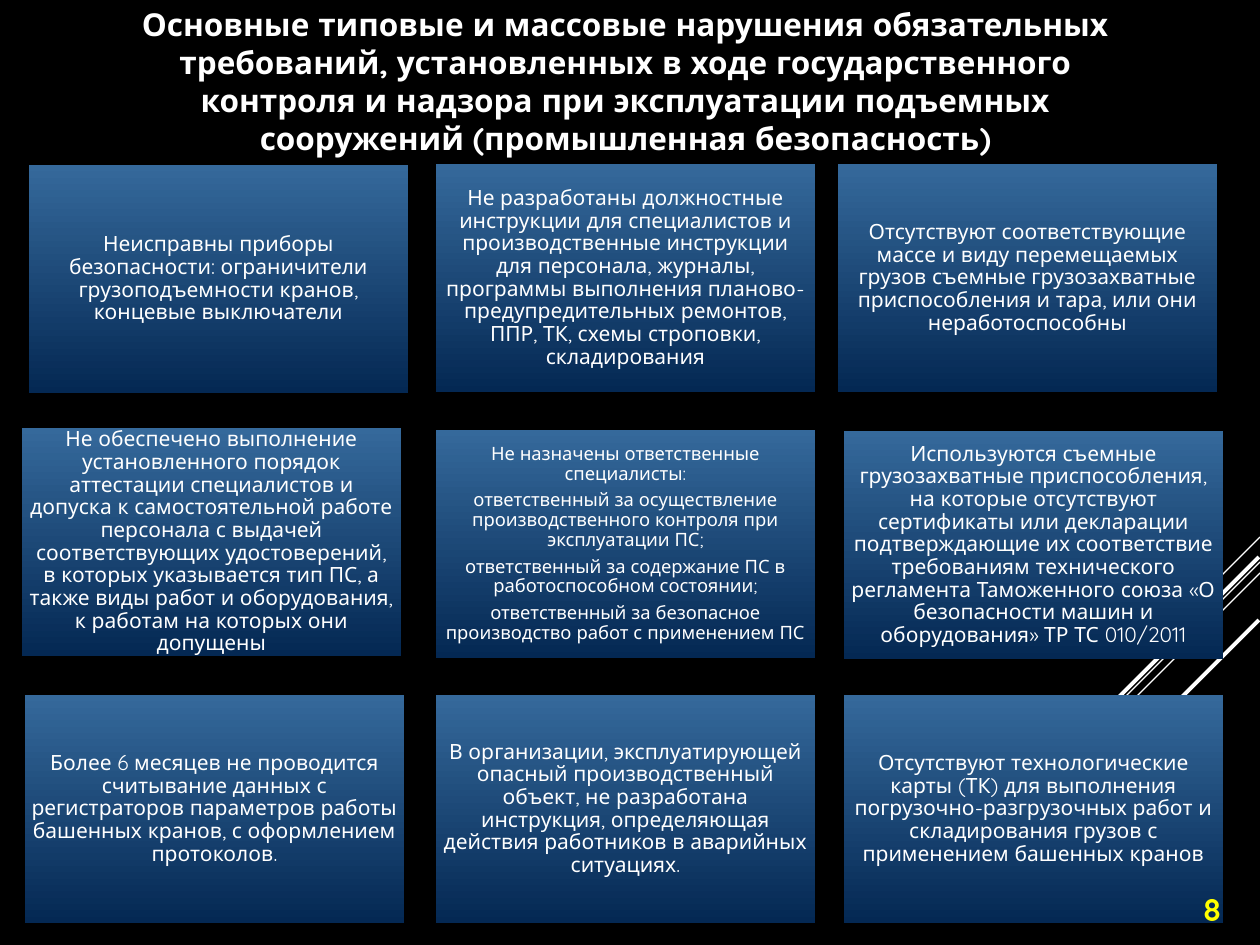
from lxml import etree
from pptx import Presentation
from pptx.dml.color import RGBColor
from pptx.enum.shapes import MSO_CONNECTOR, MSO_SHAPE
from pptx.enum.text import MSO_ANCHOR, PP_ALIGN
from pptx.oxml.ns import qn
from pptx.util import Emu, Pt

STRAIGHT = MSO_CONNECTOR.STRAIGHT
RECTANGLE, OVAL = MSO_SHAPE.RECTANGLE, MSO_SHAPE.OVAL
MIDDLE, CENTER = MSO_ANCHOR.MIDDLE, PP_ALIGN.CENTER

# Content
TITLE = ("Основные типовые и массовые нарушения обязательных требований, "
         "установленных в ходе государственного контроля и надзора при "
         "эксплуатации подъемных сооружений (промышленная безопасность)")
PAGE_NUMBER = "8"

# Violations: left, top, text size, paragraphs
VIOLATIONS = [
    (29, 165, 12, ["Неисправны приборы безопасности: ограничители "
                   "грузоподъемности кранов, концевые выключатели"]),
    (436, 164, 12, ["Не разработаны должностные инструкции для специалистов и "
                    "производственные инструкции для персонала, журналы, программы "
                    "выполнения планово-предупредительных ремонтов, ППР, ТК, схемы "
                    "строповки, складирования"]),
    (838, 164, 12, ["Отсутствуют соответствующие массе и виду перемещаемых грузов "
                    "съемные грузозахватные приспособления и тара, или они "
                    "неработоспособны"]),
    (22, 428, 12, ["Не обеспечено выполнение установленного порядок аттестации "
                   "специалистов и допуска к самостоятельной работе персонала с "
                   "выдачей соответствующих удостоверений, в которых указывается "
                   "тип ПС, а также виды работ и оборудования, к работам на которых "
                   "они допущены"]),
    (436, 430, 10.5, ["Не назначены ответственные специалисты:",
                      "ответственный за осуществление производственного контроля "
                      "при эксплуатации ПС;",
                      "ответственный за содержание ПС в работоспособном состоянии;",
                      "ответственный за безопасное производство работ с "
                      "применением ПС"]),
    (844, 431, 12, ["Используются съемные грузозахватные приспособления, на которые "
                    "отсутствуют сертификаты или декларации подтверждающие их "
                    "соответствие требованиям технического регламента Таможенного "
                    "союза «О безопасности машин и оборудования» ТР ТС 010/2011"]),
    (25, 695, 12, ["Более 6 месяцев не проводится считывание данных с регистраторов "
                   "параметров работы башенных кранов, с оформлением протоколов."]),
    (436, 695, 12, ["В организации, эксплуатирующей опасный производственный объект, "
                    "не разработана инструкция, определяющая действия работников в "
                    "аварийных ситуациях."]),
    (844, 695, 12, ["Отсутствуют технологические карты (ТК) для выполнения "
                    "погрузочно-разгрузочных работ и складирования грузов с "
                    "применением башенных кранов"]),
]
BOX_WIDTH, BOX_HEIGHT = 379, 228

# Diagonal rays at 45 degrees: right end x, y, run, width in points
RAYS = [
    (1260, 537, 105, 0.75),
    (1260, 562, 340, 0.75),
    (1260, 573, 217, 0.75),
    (1259, 557, 199, 2.25),
    (1259, 620, 144, 2.25),
]

COLORS = {"background": "000000", "text": "FFFFFF", "ray": "FFFFFF",
          "box_top": "35699B", "box_bottom": "042853", "number": "FFFF00"}
FONT = "Quicksand"
EMU_PER_PX = 914400 / 126


def px(*values):
    return [Emu(round(value * EMU_PER_PX)) for value in values]


def color(key):
    return RGBColor.from_string(COLORS[key])


def write(shape, paragraphs, size, color_key="text", bold=False, inset=(13, 6), **spacing):
    frame = shape.text_frame
    side, end = px(*inset)
    frame_format = {"word_wrap": True, "vertical_anchor": MIDDLE,
                    "margin_left": side, "margin_right": side,
                    "margin_top": end, "margin_bottom": end}
    for name, value in frame_format.items():
        setattr(frame, name, value)
    frame.text = "\n".join(paragraphs)
    for paragraph in frame.paragraphs:
        for name, value in {"alignment": CENTER, **spacing}.items():
            setattr(paragraph, name, value)
        for run in paragraph.runs:
            for name, value in {"name": FONT, "size": Pt(size), "bold": bold}.items():
                setattr(run.font, name, value)
            run.font.color.rgb = color(color_key)


deck = Presentation()
deck.slide_width, deck.slide_height = px(1260, 945)
slide = deck.slides.add_slide(deck.slide_layouts[5])
slide.background.fill.solid()
slide.background.fill.fore_color.rgb = color("background")
shapes = slide.shapes

# Diagonal rays
for x, y, run_length, width in RAYS:
    ray = shapes.add_connector(STRAIGHT, *px(x, y, x - run_length, y + run_length))
    ray.line.color.rgb = color("ray")
    ray.line.width = Pt(width)
    etree.SubElement(ray._element.spPr, qn("a:effectLst"))

# Violation boxes
for left, top, size, paragraphs in VIOLATIONS:
    box = shapes.add_shape(RECTANGLE, *px(left, top, BOX_WIDTH, BOX_HEIGHT))
    box.shadow.inherit = False
    box.fill.gradient()
    box.fill.gradient_angle = 270
    for stop, key in zip(box.fill.gradient_stops, ("box_top", "box_bottom")):
        stop.color.rgb = color(key)
    stops = box.fill.gradient_stops
    stops[0].position, stops[1].position = 0, 1
    box.line.fill.background()
    write(box, paragraphs, size, inset=(6, 6),
          line_spacing=0.9, space_after=Pt(round(size * 0.35, 1)))

# Title
title = shapes.title
title.left, title.top, title.width, title.height = px(95, 18, 1061, 126)
write(title, [TITLE], 18, bold=True)

# Page number
number = shapes.add_shape(OVAL, *px(1164, 874, 96, 69))
number.shadow.inherit = False
number.fill.background()
number.line.fill.background()
write(number, [PAGE_NUMBER], 18, "number", bold=True)

deck.save("out.pptx")
